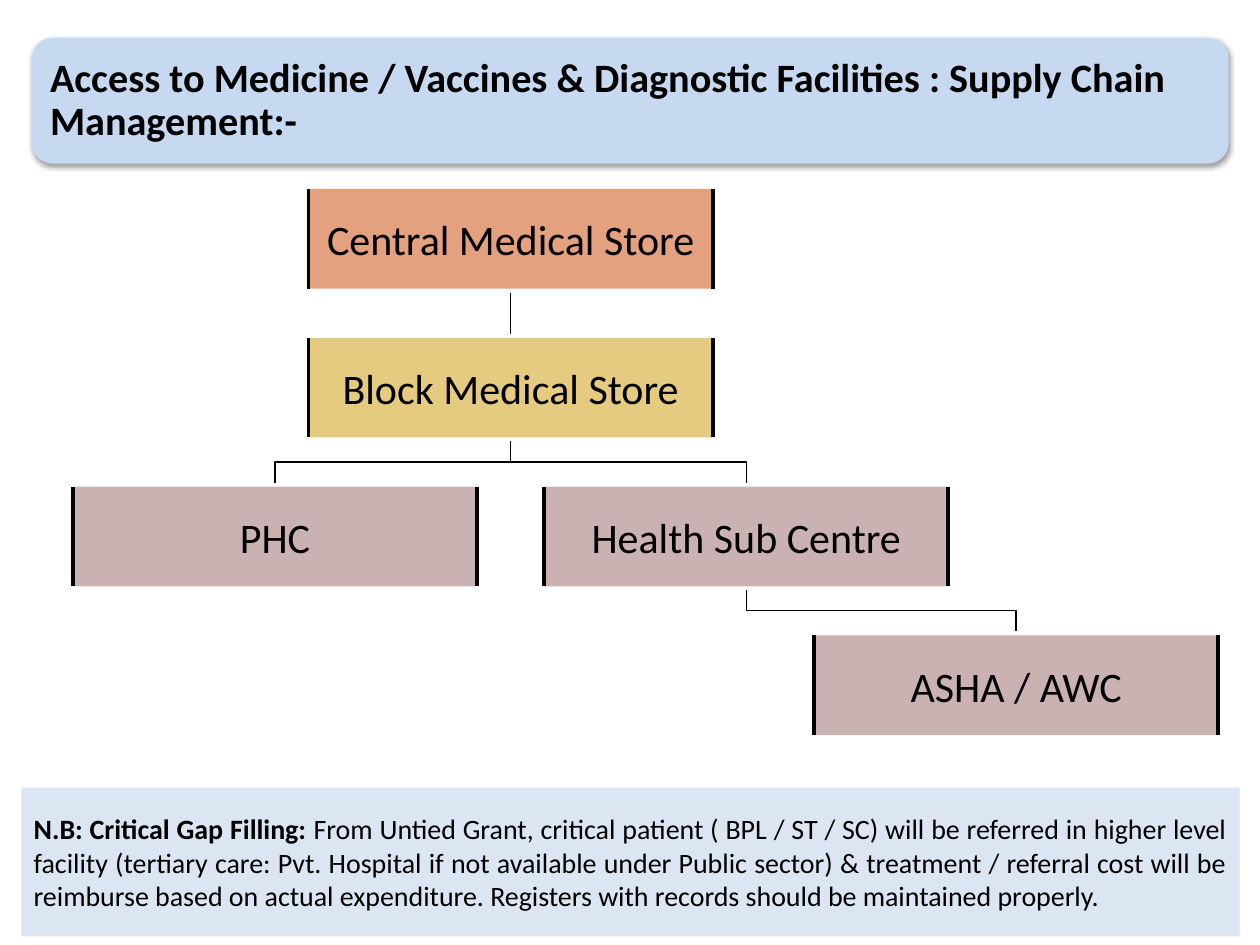
from lxml import etree
from pptx import Presentation
from pptx.dml.color import RGBColor
from pptx.enum import shapes, text
from pptx.oxml.ns import qn
from pptx.util import Cm, Pt

HUES = {
    "ink": "000000",
    "title": "C6D9F1",
    "central": "C94503",
    "block": "CC9900",
    "unit": "996666",
    "note": "DCE6F2",
}
WIDE, HIGH, TOP, STEP, GAP = 8.15, 2.01, 3.81, 3.0, 0.08
NODES = {
    "Central Medical Store": (6.22, 0, "central"),
    "Block Medical Store": (6.22, 1, "block"),
    "PHC": (1.47, 2, "unit"),
    "Health Sub Centre": (10.97, 2, "unit"),
    "ASHA / AWC": (16.41, 3, "unit"),
}
LINKS = [
    ("Health Sub Centre", "ASHA / AWC"),
    ("Block Medical Store", "Health Sub Centre"),
    ("Block Medical Store", "PHC"),
    ("Central Medical Store", "Block Medical Store"),
]
TITLE = (
    "Access to Medicine / Vaccines & Diagnostic Facilities : "
    "Supply Chain Management:-"
)
LEAD = "N.B: Critical Gap Filling: "
NOTE = (
    "From Untied Grant, critical patient ( BPL / ST / SC) will be referred in "
    "higher level facility (tertiary care: Pvt. Hospital if not available under "
    "Public sector) & treatment / referral cost will be reimburse based on "
    "actual expenditure. Registers with records should be maintained properly."
)


class Chart:
    font = "Calibri"

    def __init__(self, slide):
        self.slide = slide

    def hue(self, name):
        return RGBColor.from_string(HUES[name])

    def box(self, kind, area, fill, alpha=None):
        box = self.slide.shapes.add_shape(kind, *map(Cm, area))
        box.shadow.inherit = False
        box.line.fill.background()
        box.fill.solid()
        box.fill.fore_color.rgb = self.hue(fill)
        if alpha:
            tint = box.fill._xPr.find(".//" + qn("a:srgbClr"))
            etree.SubElement(tint, qn("a:alpha"), val=str(alpha * 1000))
        return box

    def shade(self, box):
        glow = box._element.spPr.find(qn("a:effectLst"))
        cast = etree.SubElement(
            glow, qn("a:outerShdw"), blurRad="39370", dist="20320",
            dir="5400000", rotWithShape="0",
        )
        tint = etree.SubElement(cast, qn("a:srgbClr"), val=HUES["ink"])
        etree.SubElement(tint, qn("a:alpha"), val="38000")

    def label(self, box, parts, size, align, inset=(0.25, 0.25), after=0):
        frame = box.text_frame
        frame.word_wrap = True
        frame.vertical_anchor = text.MSO_ANCHOR.MIDDLE
        frame.margin_left = frame.margin_right = Cm(inset[0])
        frame.margin_top = frame.margin_bottom = Cm(inset[1])
        para = frame.paragraphs[0]
        para.alignment = align
        para.space_after = Pt(after)
        for words, bold in parts:
            run = para.add_run()
            run.text = words
            run.font.name = self.font
            run.font.size = Pt(size)
            run.font.bold = bold
            run.font.color.rgb = self.hue("ink")
        return para

    def title(self, words):
        self.shade(self.box(
            shapes.MSO_SHAPE.ROUNDED_RECTANGLE, (0.64, 0.76, 24.13, 2.54), "title"
        ))
        area = map(Cm, (0.76, 0.89, 23.88, 2.29))
        box = self.slide.shapes.add_textbox(*area)
        para = self.label(
            box, [(words, True)], 23, text.PP_ALIGN.LEFT, after=8
        )
        para.line_spacing = 0.9

    def node(self, words, left, row, fill):
        area = (left, TOP + row * STEP, WIDE, HIGH)
        box = self.box(shapes.MSO_SHAPE.DOUBLE_BRACKET, area, fill, 50)
        box.adjustments[0] = 0
        box.line.color.rgb = self.hue("ink")
        box.line.width = Pt(2.25)
        self.label(
            box, [(words, False)], 24, text.PP_ALIGN.CENTER, (0, 0), after=10
        )

    def link(self, head, tail):
        (left, row, _), (right, _, _) = NODES[head], NODES[tail]
        start, end = left + WIDE / 2, right + WIDE / 2
        top = TOP + row * STEP + HIGH + GAP
        drop = STEP - HIGH - 2 * GAP
        span = end - start
        kind, turn = shapes.MSO_CONNECTOR.STRAIGHT, None
        ends = (start, top, end, top + drop)
        if span:
            kind = shapes.MSO_CONNECTOR.ELBOW
            turn = 270 if span > 0 else 90
            side = drop / 2 if span > 0 else -drop / 2
            mid, level = (start + end) / 2, top + drop / 2
            half = abs(span) / 2
            ends = (mid + side, level - half, mid - side, level + half)
        line = self.slide.shapes.add_connector(kind, *map(Cm, ends))
        if turn:
            line._element.spPr.xfrm.set("rot", str(turn * 60000))
        line.line.color.rgb = self.hue("ink")
        line.line.width = Pt(0.75)
        etree.SubElement(line._element.spPr, qn("a:effectLst"))

    def note(self, lead, words):
        area = (0.43, 15.88, 24.56, 3)
        box = self.box(shapes.MSO_SHAPE.RECTANGLE, area, "note")
        self.label(
            box, [(lead, True), (words, False)], 16,
            text.PP_ALIGN.JUSTIFY, (0.25, 0.13),
        )


def main():
    deck = Presentation()
    deck.slide_width, deck.slide_height = Cm(25.4), Cm(19.05)
    chart = Chart(deck.slides.add_slide(deck.slide_layouts[6]))
    chart.title(TITLE)
    for head, tail in LINKS:
        chart.link(head, tail)
    for words, place in NODES.items():
        chart.node(words, *place)
    chart.note(LEAD, NOTE)
    deck.save("out.pptx")


if __name__ == "__main__":
    main()
